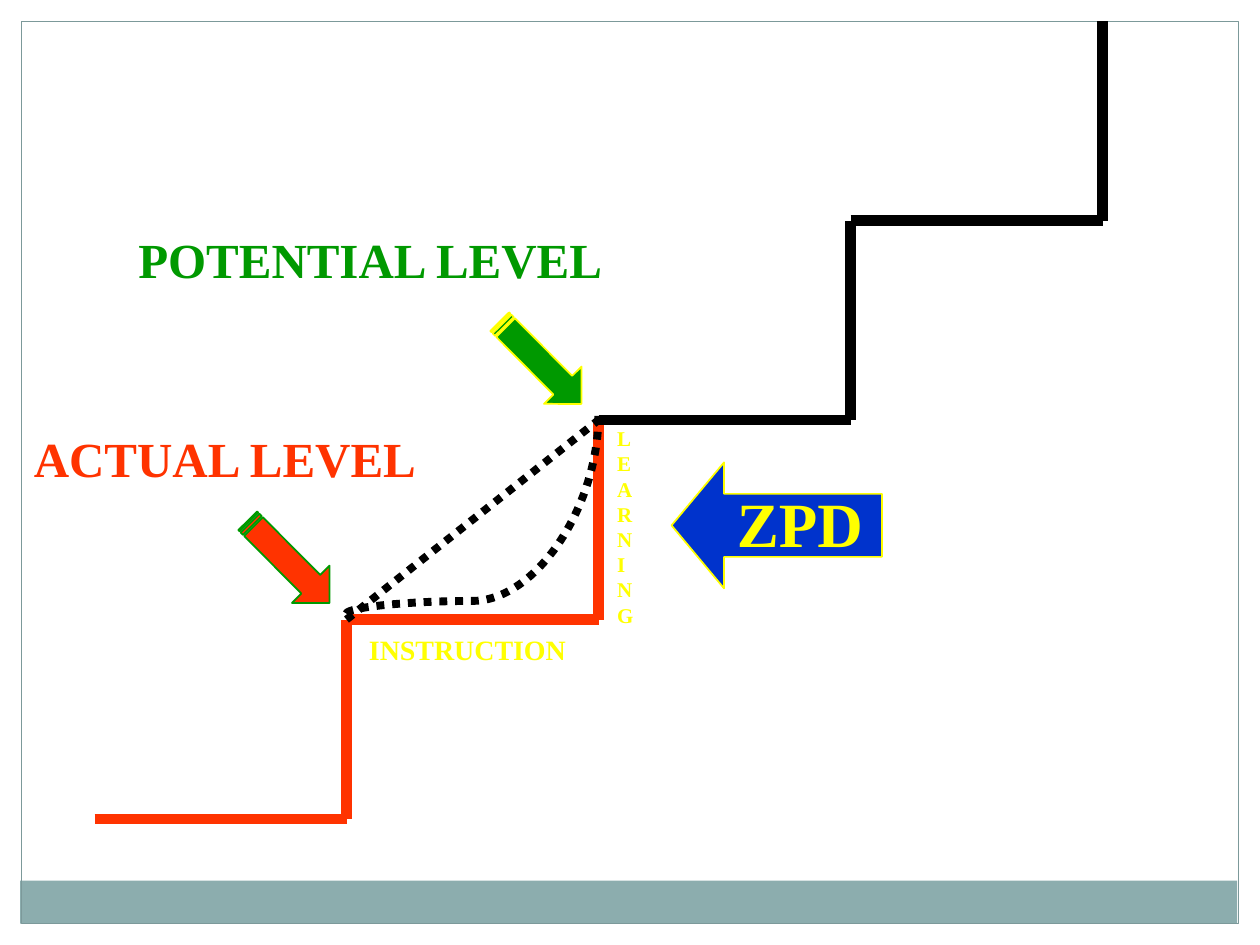
from lxml import etree
from pptx import Presentation
from pptx.dml.color import RGBColor
from pptx.enum import dml, shapes, text
from pptx.oxml.ns import qn
from pptx.util import Inches, Pt

BLACK, RED, GREEN = "000000", "FF3300", "009900"
YELLOW, BLUE, BAND, FRAME = "FFFF00", "0033CC", "8CADAE", "7C999A"

# Staircase: corners alternate between a tread and a riser
START, RUN, RISE = (0.75, 6.5), 2, 1.583
STEP_COLORS = [RED] * 4 + [BLACK] * 4

# text, left, top, width, height, size, colour
LABELS = [
    ("POTENTIAL LEVEL", 1, 1.77, 4, 0.57, 28, GREEN),
    ("ACTUAL LEVEL", 0.17, 3.35, 4, 0.57, 28, RED),
    ("INSTRUCTION", 2.83, 4.97, 2, 0.37, 16, YELLOW),
    ("LEARNING", 4.8, 3.33, 0.2, 1.7, 12, YELLOW),
]
# left, top, fill, line
LEVEL_ARROWS = [(1.83, 4.25, RED, GREEN), (3.83, 2.67, GREEN, YELLOW)]


def rgb(color):
    return RGBColor.from_string(color)


def add_shape(parent, kind, box, fill=None, line=None, width=1):
    sp = parent.add_shape(kind, *map(Inches, box))
    sp.shadow.inherit = False
    if fill:
        sp.fill.solid()
        sp.fill.fore_color.rgb = rgb(fill)
    else:
        sp.fill.background()
    if line:
        sp.line.color.rgb = rgb(line)
        sp.line.width = Pt(width)
    else:
        sp.line.fill.background()
    return sp


def add_line(start, end, color, width, kind=shapes.MSO_CONNECTOR.STRAIGHT, dotted=False):
    cx = slide.shapes.add_connector(kind, *map(Inches, start + end))
    cx.line.color.rgb = rgb(color)
    cx.line.width = Pt(width)
    if dotted:
        cx.line.dash_style = dml.MSO_LINE.ROUND_DOT
        cx.line._ln.find(qn("a:prstDash")).set("val", "sysDot")
    etree.SubElement(cx._element.spPr, qn("a:effectLst"))
    return cx


def add_label(parent, words, left, top, width, height, size, color):
    tf = parent.add_textbox(*map(Inches, (left, top, width, height))).text_frame
    tf.word_wrap = True
    tf.auto_size = text.MSO_AUTO_SIZE.SHAPE_TO_FIT_TEXT
    p = tf.paragraphs[0]
    p.text = words
    p.font.name = "Times New Roman"
    p.font.size = Pt(size)
    p.font.bold = True
    p.font.color.rgb = rgb(color)


prs = Presentation()
prs.slide_width, prs.slide_height = Inches(10), Inches(7.5)
slide = prs.slides.add_slide(prs.slide_layouts[6])
kinds = shapes.MSO_SHAPE

add_shape(slide.shapes, kinds.RECTANGLE, (0.16, 6.99, 9.66, 0.34), BAND)
add_shape(slide.shapes, kinds.RECTANGLE, (0.17, 0.17, 9.66, 7.16), line=FRAME, width=0.75)

corners = [(START[0] + RUN * ((i + 1) // 2), START[1] - RISE * (i // 2))
           for i in range(len(STEP_COLORS) + 1)]
for start, end, color in zip(corners, corners[1:], STEP_COLORS):
    add_line(start, end, color, 6)

for left, top, fill, line in LEVEL_ARROWS:
    arrow = add_shape(slide.shapes, kinds.STRIPED_RIGHT_ARROW, (left, top, 0.92, 0.42), fill, line)
    arrow.rotation = 45.2

for label in LABELS:
    add_label(slide.shapes, *label)

# Curve from the actual to the potential level, a quarter turn anticlockwise
actual, potential = corners[2], corners[4]
curve = add_line((2.96, 3.08), (4.54, 5.08), BLACK, 4.5, shapes.MSO_CONNECTOR.CURVE, True)
curve._element.spPr.find(qn("a:xfrm")).set("rot", str(270 * 60000))
bends = curve._element.spPr.find(qn("a:prstGeom")).get_or_add_avLst()
etree.SubElement(bends, qn("a:gd"), name="adj1", fmla="val 6400")

zpd = slide.shapes.add_group_shape().shapes
arrow = add_shape(zpd, kinds.LEFT_ARROW, (5.33, 3.67, 1.67, 1), BLUE, YELLOW)
arrow.adjustments[1] = 0.417
add_label(zpd, "ZPD", 5.75, 3.8, 2.25, 0.7, 36, YELLOW)

add_line(actual, potential, BLACK, 4.5, dotted=True)

prs.save("out.pptx")
